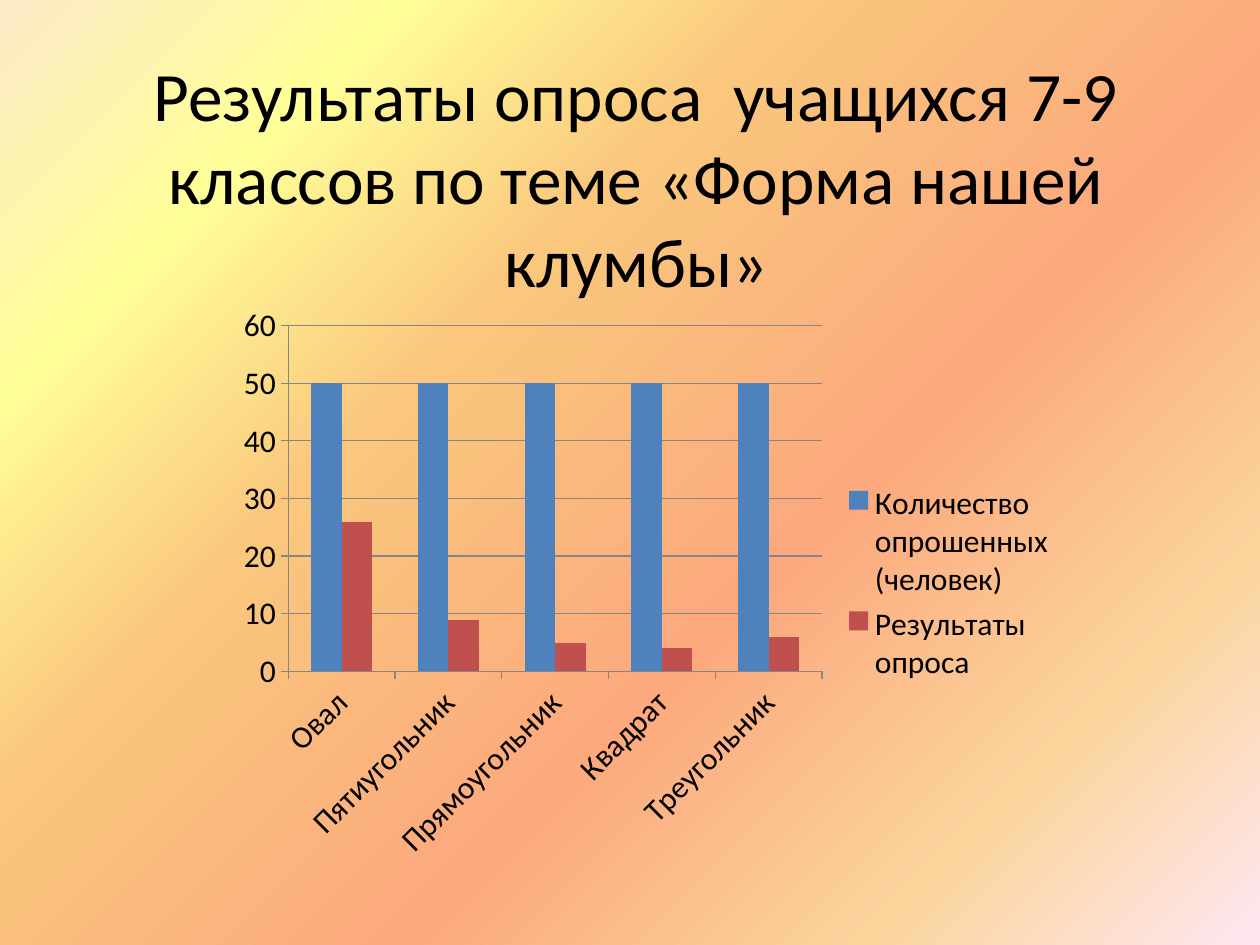
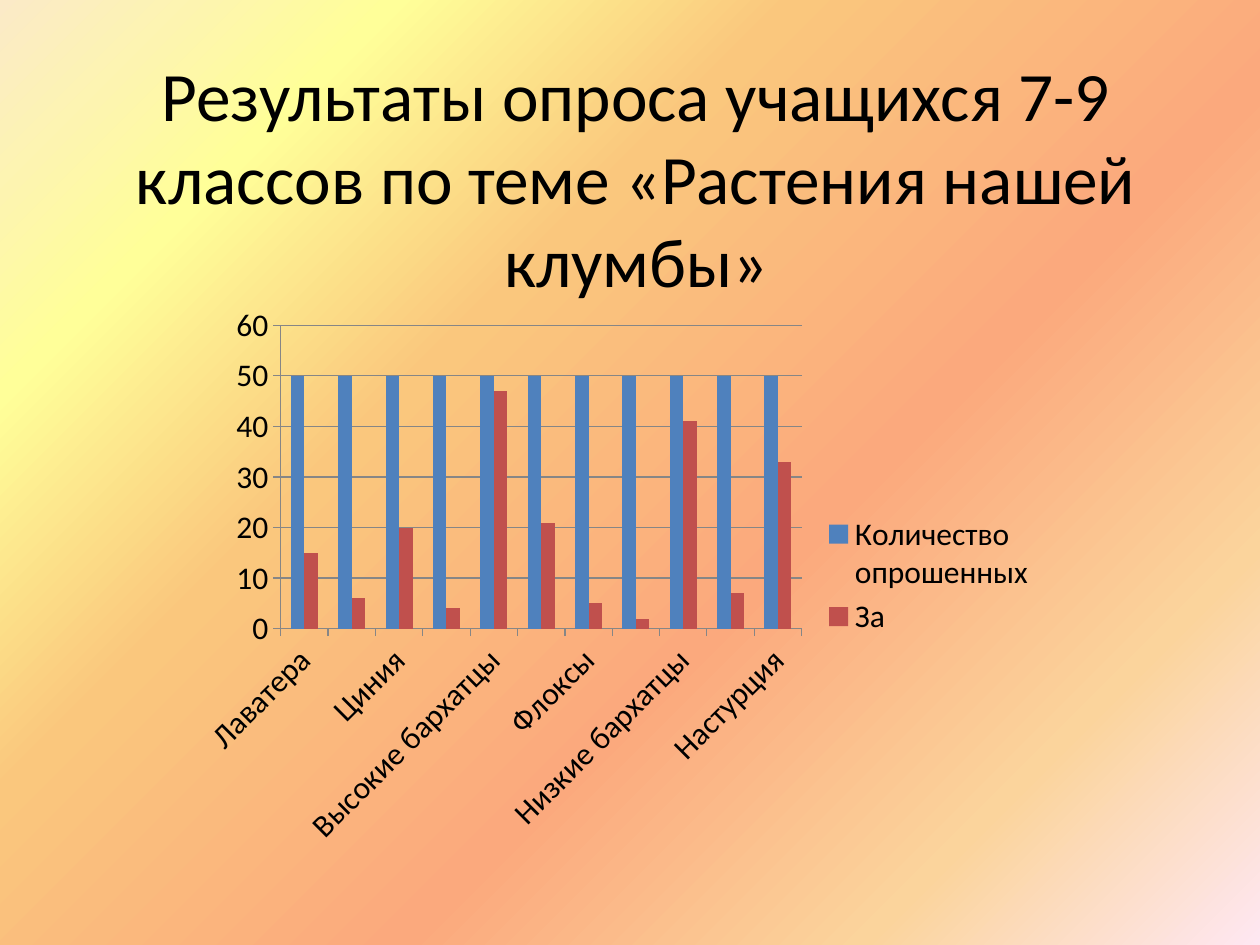
from lxml import etree
from pptx import Presentation
from pptx import util as u
from pptx.chart.data import CategoryChartData
from pptx.dml.color import RGBColor
from pptx.enum import chart as ch, text
from pptx.oxml.ns import qn

PX = u.Inches(1) // 126
FONT, BLACK, GREY = "Calibri", "000000", "868686"
SERIES_COLORS = ("4F81BD", "C0504D")
BACKGROUND = ((0, "FBEAC7"), (18, "FFFF99"), (36, "FAC77D"),
              (61, "FBA97D"), (82, "FBD49C"), (100, "FEE7F2"))
TITLE_BOX = (69, 98, 1134, 158)

SURVEYS = (
    dict(title="Результаты опроса  учащихся 7-9 классов по теме «Форма нашей клумбы»",
         box=(227, 295, 842, 576),
         asked="Количество опрошенных (человек)", answer="Результаты опроса",
         votes={"Овал": 26, "Пятиугольник": 9, "Прямоугольник": 5,
                "Квадрат": 4, "Треугольник": 6}),
    dict(title="Результаты опроса учащихся 7-9 классов по теме «Растения нашей клумбы»",
         box=(186, 295, 863, 561),
         asked="Количество опрошенных", answer="За",
         votes={"Лаватера": 15, "Астра": 6, "Циния": 20, "Космея": 4,
                "Высокие бархатцы": 47, "Агератум": 21, "Флоксы": 5,
                "Подсолнух": 2, "Низкие бархатцы": 41, "Ландыши": 7,
                "Настурция": 33}),
)
RESPONDENTS = 50


def rgb(color):
    """Turn a hex string into a colour."""
    return RGBColor.from_string(color)


def emu(box):
    """Scale a box from px to EMU."""
    return [u.Emu(v * PX) for v in box]


def set_font(font, size, color=BLACK):
    """Give a font the shared face, a size and a colour."""
    font.name, font.size = FONT, u.Pt(size)
    font.color.rgb = rgb(color)


def put_text(tf, content, size, align=text.PP_ALIGN.CENTER,
             anchor=text.MSO_ANCHOR.MIDDLE):
    """Write one formatted paragraph into a text frame."""
    tf.word_wrap, tf.vertical_anchor = True, anchor
    tf.auto_size = text.MSO_AUTO_SIZE.NONE
    p = tf.paragraphs[0]
    p.alignment = align
    r = p.add_run()
    r.text = content
    set_font(r.font, size)


def paint_background(master):
    """Fill the master with the diagonal gradient."""
    fill = master.background.fill
    fill.gradient()
    fill.gradient_angle = 315
    stops = master.element.cSld.find(".//" + qn("a:gsLst"))
    for stop in list(stops):
        stops.remove(stop)
    for percent, color in BACKGROUND:
        stop = etree.SubElement(stops, qn("a:gs"), pos=str(percent * 1000))
        etree.SubElement(stop, qn("a:srgbClr"), val=color)


def add_title(s, content, box):
    """Place and fill the title placeholder."""
    sp = s.shapes.title
    sp.left, sp.top, sp.width, sp.height = emu(box)
    put_text(sp.text_frame, content, 39.6)


def style_line(line):
    """Draw a thin grey chart line."""
    line.color.rgb = rgb(GREY)
    line.width = u.Pt(0.75)


def add_survey_chart(s, survey):
    """Add the clustered columns of respondents and votes."""
    votes = survey["votes"]
    data = CategoryChartData()
    data.categories = list(votes)
    data.add_series(survey["asked"], [RESPONDENTS] * len(votes))
    data.add_series(survey["answer"], list(votes.values()))
    chart = s.shapes.add_chart(ch.XL_CHART_TYPE.COLUMN_CLUSTERED,
                               *emu(survey["box"]), data).chart
    set_font(chart.font, 18)
    chart.has_title = False
    chart.has_legend = True
    chart.legend.position = ch.XL_LEGEND_POSITION.RIGHT
    chart.legend.include_in_layout = False

    plot = chart.plots[0]
    plot.gap_width, plot.overlap, plot.vary_by_categories = 150, 0, False
    for series, color in zip(plot.series, SERIES_COLORS):
        series.format.fill.solid()
        series.format.fill.fore_color.rgb = rgb(color)

    for axis in (chart.category_axis, chart.value_axis):
        axis.major_tick_mark = ch.XL_TICK_MARK.OUTSIDE
        style_line(axis.format.line)
    scale = chart.value_axis
    scale.minimum_scale, scale.maximum_scale, scale.major_unit = 0, 60, 10
    scale.has_major_gridlines = True
    style_line(scale.major_gridlines.format.line)

    names = chart.category_axis
    set_font(names.tick_labels.font, 18)
    body = names.format.line and chart.element.find(
        ".//" + qn("c:catAx") + "/" + qn("c:txPr") + "/" + qn("a:bodyPr"))
    body.set("rot", "-2700000")
    body.set("vert", "horz")


def add_survey_slide(prs, survey):
    """Add one slide with a title and its survey chart."""
    s = prs.slides.add_slide(prs.slide_layouts[5])
    add_title(s, survey["title"], TITLE_BOX)
    add_survey_chart(s, survey)


def main():
    """Build and save the presentation."""
    prs = Presentation()
    prs.slide_width, prs.slide_height = emu((1260, 945))
    paint_background(prs.slide_master)
    for survey in SURVEYS:
        add_survey_slide(prs, survey)
    prs.save("out.pptx")


if __name__ == "__main__":
    main()
